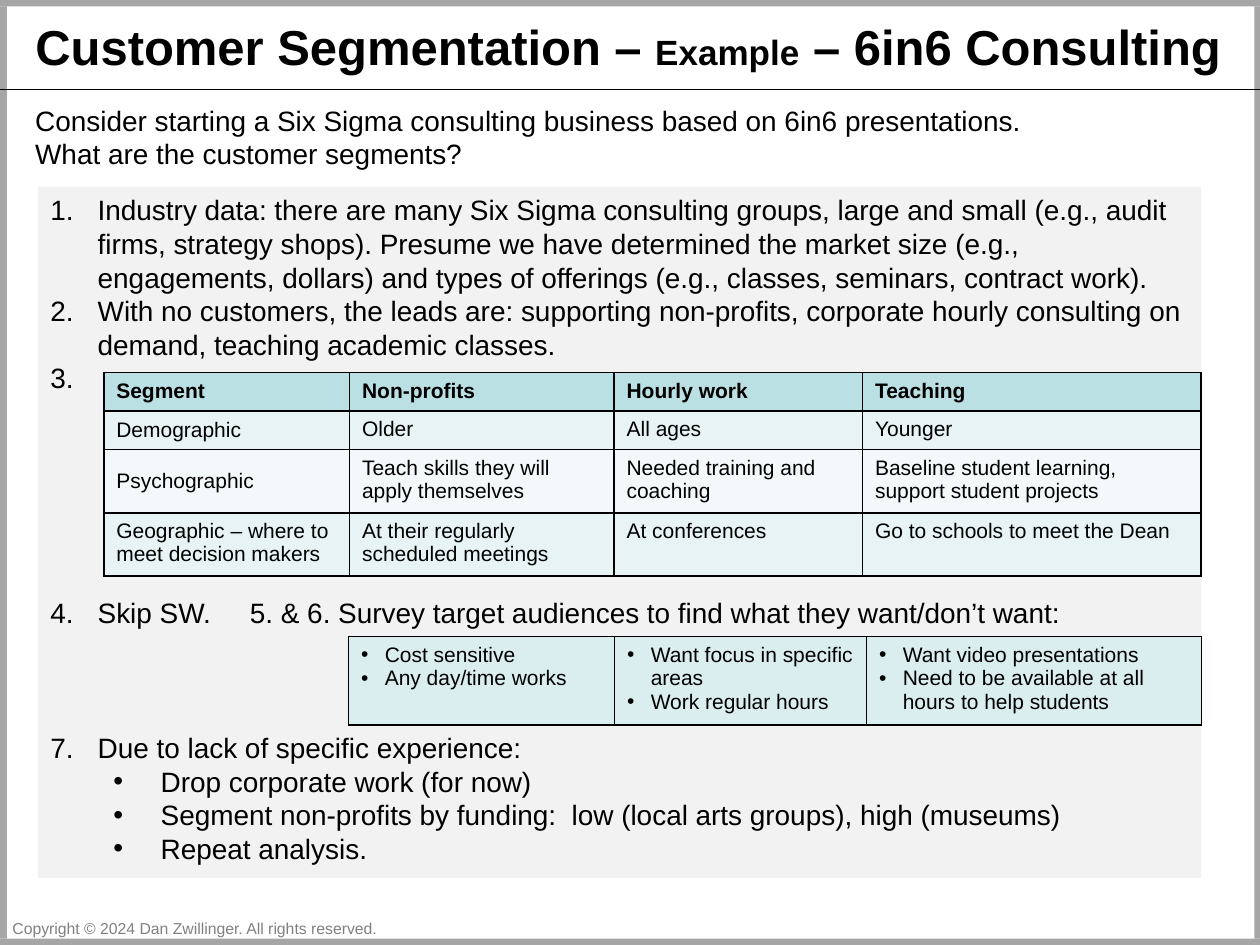
import pptx
import pptx.dml.color
import pptx.enum.shapes
import pptx.enum.text
import pptx.oxml.ns
import pptx.util
from lxml import etree

Pt = pptx.util.Pt
qn = pptx.oxml.ns.qn
ANCHOR = pptx.enum.text.MSO_ANCHOR
FIT = pptx.enum.text.MSO_AUTO_SIZE


def rgb(value):
    return pptx.dml.color.RGBColor.from_string(value)


def add_xml(parent, tag, **attrs):
    return etree.SubElement(parent, qn(tag), {k: str(v) for k, v in attrs.items()})


class Deck:
    font = "Arial"
    black = "000000"
    gray = "A6A6A6"

    def __init__(self, width, height):
        self.prs = pptx.Presentation()
        self.prs.slide_width = Pt(width)
        self.prs.slide_height = Pt(height)
        self.s = self.prs.slides.add_slide(self.prs.slide_layouts[1])

    def style(self, f, size, color=black, bold=False):
        f.name = self.font
        f.size = Pt(size)
        f.bold = bold
        f.color.rgb = rgb(color)

    def place(self, sp, x, y, w, h):
        sp.left, sp.top, sp.width, sp.height = Pt(x), Pt(y), Pt(w), Pt(h)
        sp.text_frame.auto_size = FIT.NONE
        sp.text_frame.word_wrap = True
        sp.text_frame.vertical_anchor = ANCHOR.TOP

    def bar(self, x, y, w, h):
        sp = self.s.shapes.add_shape(pptx.enum.shapes.MSO_SHAPE.RECTANGLE, Pt(x), Pt(y), Pt(w), Pt(h))
        sp.shadow.inherit = False
        sp.fill.solid()
        sp.fill.fore_color.rgb = rgb(self.gray)
        sp.line.fill.background()

    def rule(self, x1, y1, x2, y2):
        c = self.s.shapes.add_connector(
            pptx.enum.shapes.MSO_CONNECTOR.STRAIGHT, Pt(x1), Pt(y1), Pt(x2), Pt(y2))
        c.line.color.rgb = rgb(self.black)
        c.line.width = Pt(0.75)
        add_xml(c._element.spPr, "a:effectLst")

    def title(self, runs, *box):
        sp = self.s.shapes.title
        self.place(sp, *box)
        p = sp.text_frame.paragraphs[0]
        p.alignment = pptx.enum.text.PP_ALIGN.LEFT
        for text, size in runs:
            r = p.add_run()
            r.text = text
            self.style(r.font, size, bold=True)

    def marker(self, p, indent, hang, start=None, tab=None):
        pPr = p._p.get_or_add_pPr()
        pPr.set("marL", str(Pt(indent)))
        pPr.set("indent", str(-Pt(hang)))
        add_xml(pPr, "a:buFont", typeface=self.font)
        if start:
            add_xml(pPr, "a:buAutoNum", type="arabicPeriod", startAt=start)
        else:
            add_xml(pPr, "a:buChar", char="•")
        if tab:
            add_xml(add_xml(pPr, "a:tabLst"), "a:tab", pos=Pt(tab), algn="l")

    def body(self, items, fill, *box):
        sp = self.s.placeholders[1]
        self.place(sp, *box)
        sp.fill.solid()
        sp.fill.fore_color.rgb = rgb(fill)
        tf = sp.text_frame
        for i, (text, start, before, tab) in enumerate(items):
            p = tf.paragraphs[0] if i == 0 else tf.add_paragraph()
            p.text = text
            p.level = 0 if start else 1
            self.marker(p, 27 if start else 63, 27, start, tab)
            p.space_before = Pt(before)
            self.style(p.font, 16)

    def text(self, text, size, color, wrap, *box):
        sp = self.s.shapes.add_textbox(*map(Pt, box))
        tf = sp.text_frame
        tf.word_wrap = wrap
        p = tf.paragraphs[0]
        p.text = text
        self.style(p.font, size, color)

    def cell(self, cell, lines, fill, bold=False, bullets=False):
        tcPr = cell._tc.get_or_add_tcPr()
        for side in ("a:lnL", "a:lnR", "a:lnT", "a:lnB"):
            ln = add_xml(tcPr, side, w=Pt(1))
            add_xml(add_xml(ln, "a:solidFill"), "a:srgbClr", val=self.black)
        cell.fill.solid()
        cell.fill.fore_color.rgb = rgb(fill)
        tf = cell.text_frame
        for i, line in enumerate(lines):
            p = tf.paragraphs[0] if i == 0 else tf.add_paragraph()
            p.text = line
            if bullets:
                self.marker(p, 13.5, 13.5)
            self.style(p.font, 12, bold=bold)

    def table(self, x, y, widths, heights):
        t = self.s.shapes.add_table(len(heights), len(widths), Pt(x), Pt(y),
                                    Pt(sum(widths)), Pt(sum(heights))).table
        for col, w in zip(t.columns, widths):
            col.width = Pt(w)
        for row, h in zip(t.rows, heights):
            row.height = Pt(h)
        return t


SEGMENTS = [
    ["Segment", "Non-profits", "Hourly work", "Teaching"],
    ["Demographic", "Older", "All ages", "Younger"],
    ["Psychographic", "Teach skills they will apply themselves",
     "Needed training and coaching", "Baseline student learning, support student projects"],
    ["Geographic – where to meet decision makers", "At their regularly scheduled meetings",
     "At conferences", "Go to schools to meet the Dean"],
]
ROW_FILLS = ["BBE0E3", "E7F3F4", "F3F9FA", "E7F3F4"]
SURVEY = [
    ["Cost sensitive", "Any day/time works"],
    ["Want focus in specific areas", "Work regular hours"],
    ["Want video presentations", "Need to be available at all hours to help students"],
]
STEPS = [
    ("Industry data: there are many Six Sigma consulting groups, large and small (e.g., audit "
     "firms, strategy shops). Presume we have determined the market size (e.g., engagements, "
     "dollars) and types of offerings (e.g., classes, seminars, contract work).", 1, 0, None),
    ("With no customers, the leads are: supporting non-profits, corporate hourly consulting "
     "on demand, teaching academic classes.", 2, 0, None),
    (" ", 3, 0, None),
    ("Skip SW.\t5. & 6. Survey target audiences to find what they want/don’t want:", 4, 115, 114),
    ("Due to lack of specific experience:", 7, 58, None),
    ("Drop corporate work (for now)", None, 0, None),
    ("Segment non-profits by funding:  low (local arts groups), high (museums)", None, 0, None),
    ("Repeat analysis.", None, 0, None),
]


def main():
    d = Deck(720, 540)
    for box in [(0, 0, 720, 3.6), (0, 536.4, 720, 3.6), (0, 3.6, 4, 532.8), (716.8, 3.6, 3.2, 532.8)]:
        d.bar(*box)
    d.rule(0, 51, 720, 51)
    d.title([("Customer Segmentation – ", 28), ("Example", 20), (" – 6in6 Consulting", 28)],
            13, 5.8, 707, 41)
    d.text("Consider starting a Six Sigma consulting business based on 6in6 presentations. "
           "What are the customer segments?", 16, d.black, True, 13, 55.5, 589, 46)
    d.body(STEPS, "F2F2F2", 21.6, 106.6, 664.8, 395)

    t = d.table(59.3, 213, [140.4, 151.2, 142, 193.5], [22, 22, 36, 36])
    for i, (row, fill) in enumerate(zip(SEGMENTS, ROW_FILLS)):
        for j, text in enumerate(row):
            d.cell(t.cell(i, j), [text], fill, bold=i == 0)
    for i in (1, 2):
        t.cell(i, 0).vertical_anchor = ANCHOR.MIDDLE

    t = d.table(199.2, 363.8, [152, 144, 191.5], [50.4])
    for j, lines in enumerate(SURVEY):
        d.cell(t.cell(0, j), lines, "DAEDEF", bullets=True)

    d.text("Copyright © 2024 Dan Zwillinger. All rights reserved.", 9, "808080", False,
           0, 521.3, 226, 18)
    d.prs.save("out.pptx")


if __name__ == "__main__":
    main()
